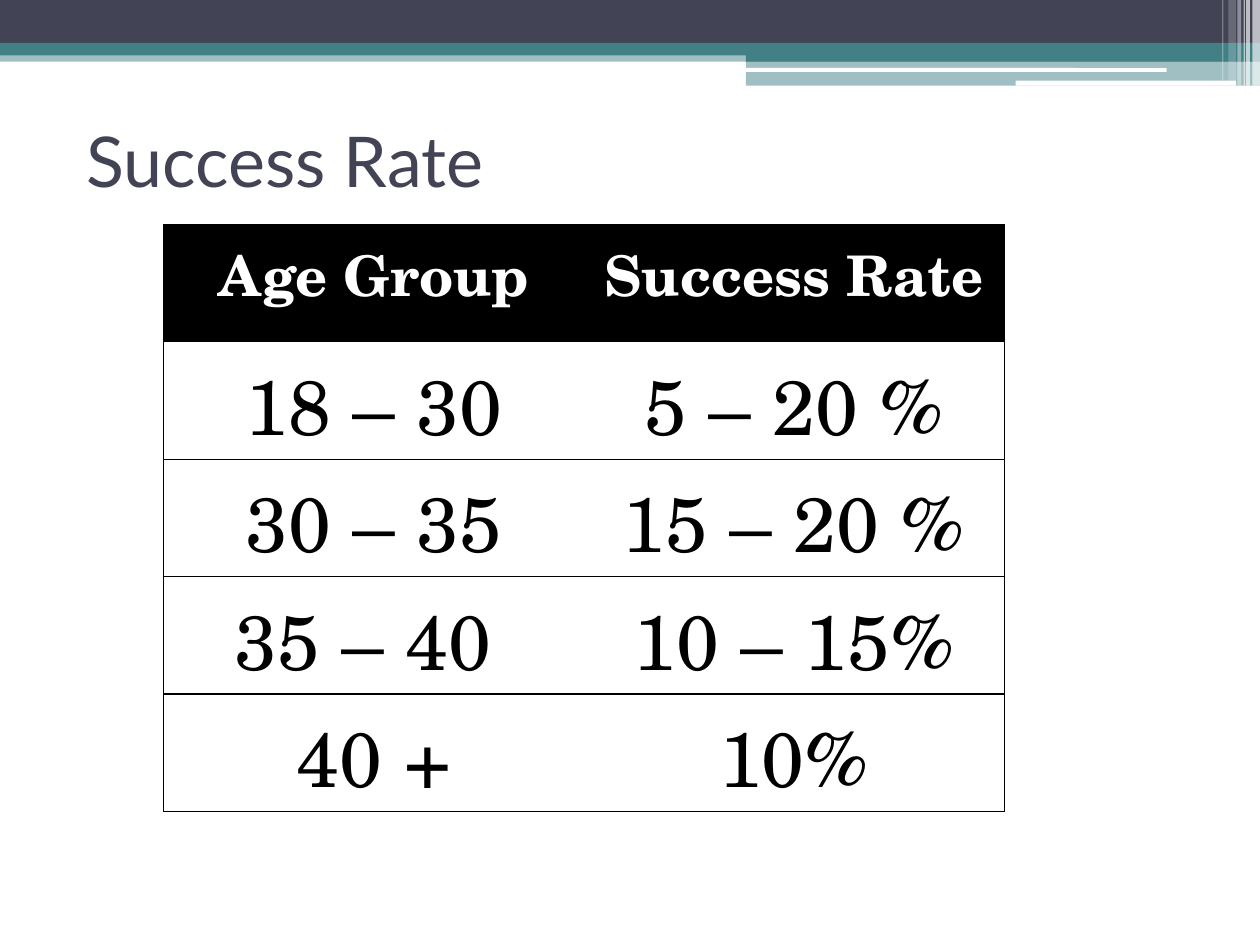
"""Build the Success Rate slide: a banded header, a title and a table of rates by age."""
from dataclasses import dataclass

from lxml.etree import SubElement
from pptx import Presentation
from pptx.dml.color import RGBColor
from pptx.enum.shapes import MSO_SHAPE as Shape
from pptx.enum.text import MSO_ANCHOR as Anchor, PP_ALIGN as Align
from pptx.oxml.ns import qn
from pptx.util import Emu, Inches, Pt


@dataclass(frozen=True)
class Theme:
    navy: str = "424456"
    teal: str = "438086"
    white: str = "FFFFFF"
    black: str = "000000"
    title_font: str = "Lato"
    table_font: str = "TeX Gyre Schola"
    title_size: int = 40
    header_size: int = 32
    body_size: int = 44
    border: float = 0.75


@dataclass(frozen=True)
class Area:
    """A rectangle in grid columns and rows."""
    column: float
    row: float
    columns: float
    rows: float


@dataclass(frozen=True)
class Band:
    area: Area
    color: str
    opacity: int = 100
    rounded: bool = False


THEME = Theme()
COLUMNS, ROWS = 100, 75
WIDTH, HEIGHT = Inches(10), Inches(7.5)
BANDS = [
    Band(Area(0, 4, 100, 0.9), THEME.teal, 50),
    Band(Area(0, 0, 100, 3.4), THEME.navy),
    Band(Area(0, 3.4, 100, 1), THEME.teal),
    Band(Area(59.2, 3.9, 40.8, 1), THEME.teal),
    Band(Area(59.2, 4.8, 40.8, 2), THEME.teal, 50),
    Band(Area(59.1, 5.4, 33.5, 0.3), THEME.white, rounded=True),
    Band(Area(80.6, 6.4, 17.5, 0.4), THEME.white, rounded=True),
    Band(Area(99.4, 0, 0.6, 6.8), THEME.white, 65),
    Band(Area(98.9, 0, 0.3, 6.8), THEME.white, 65),
    Band(Area(98.7, 0, 0.1, 6.8), THEME.white, 60),
    Band(Area(98.2, 0, 0.3, 6.8), THEME.white, 40),
    Band(Area(97.5, 0, 0.6, 6.4), THEME.white, 20),
    Band(Area(97, 0, 0.1, 6.4), THEME.white, 30),
]
TITLE_AREA = Area(5.9, 6.8, 90, 11.7)
TABLE_AREA = Area(13, 17.8, 66.7, 46.6)
RATES = [
    ("Age Group", "Success Rate"),
    ("18 – 30", "5 – 20 %"),
    ("30 – 35", "15 – 20 %"),
    ("35 – 40 ", "10 – 15%"),
    ("40 +", "10%"),
]


def place(area: Area) -> tuple[Emu, Emu, Emu, Emu]:
    """Turn a grid area into left, top, width and height."""
    across, down = WIDTH / COLUMNS, HEIGHT / ROWS
    return (Emu(round(area.column * across)), Emu(round(area.row * down)),
            Emu(round(area.columns * across)), Emu(round(area.rows * down)))


def draw_band(page, band: Band) -> None:
    """Draw one bar of the header decoration."""
    kind = Shape.ROUNDED_RECTANGLE if band.rounded else Shape.RECTANGLE
    bar = page.shapes.add_shape(kind, *place(band.area))
    bar.shadow.inherit = False
    bar.line.fill.background()
    bar.fill.solid()
    bar.fill.fore_color.rgb = RGBColor.from_string(band.color)
    if band.opacity < 100:
        color = next(bar.element.spPr.iter(qn("a:srgbClr")))
        SubElement(color, qn("a:alpha"), val=str(band.opacity * 1000))


def write(frame, text: str, font: str, size: int, color: str, bold: bool = False) -> None:
    """Put one styled paragraph into a text frame."""
    frame.text = text
    style = frame.paragraphs[0].font
    style.name, style.size, style.bold = font, Pt(size), bold
    style.color.rgb = RGBColor.from_string(color)


def draw_title(page, text: str) -> None:
    """Draw the slide title."""
    box = page.shapes.add_textbox(*place(TITLE_AREA))
    frame = box.text_frame
    frame.word_wrap = True
    frame.vertical_anchor = Anchor.MIDDLE
    write(frame, text, THEME.title_font, THEME.title_size, THEME.navy)


def set_borders(cell, visible: str) -> None:
    """Rule the named sides of a cell (L, R, T, B) and clear the others."""
    properties = cell._tc.get_or_add_tcPr()
    for side in "LRTB":
        line = SubElement(properties, qn(f"a:ln{side}"), w=str(Pt(THEME.border)))
        if side in visible:
            fill = SubElement(line, qn("a:solidFill"))
            SubElement(fill, qn("a:srgbClr"), val=THEME.black)
        else:
            SubElement(line, qn("a:noFill"))


def draw_table(page, rates: list[tuple[str, str]]) -> None:
    """Draw the table with a dark header and ruled rows."""
    table = page.shapes.add_table(len(rates), len(rates[0]), *place(TABLE_AREA)).table
    table.first_row = table.horz_banding = False
    for row, texts in enumerate(rates):
        header = row == 0
        for column, text in enumerate(texts):
            cell = table.cell(row, column)
            set_borders(cell, "TB" + "LR"[column])
            if header:
                cell.fill.solid()
                cell.fill.fore_color.rgb = RGBColor.from_string(THEME.black)
            else:
                cell.fill.background()
            write(cell.text_frame, text, THEME.table_font,
                  THEME.header_size if header else THEME.body_size,
                  THEME.white if header else THEME.black, header)
            cell.text_frame.paragraphs[0].alignment = Align.CENTER


def main() -> None:
    """Assemble and save the deck."""
    deck = Presentation()
    deck.slide_width, deck.slide_height = WIDTH, HEIGHT
    page = deck.slides.add_slide(deck.slide_layouts[6])
    for band in BANDS:
        draw_band(page, band)
    draw_title(page, "Success Rate")
    draw_table(page, RATES)
    deck.save("out.pptx")


if __name__ == "__main__":
    main()
